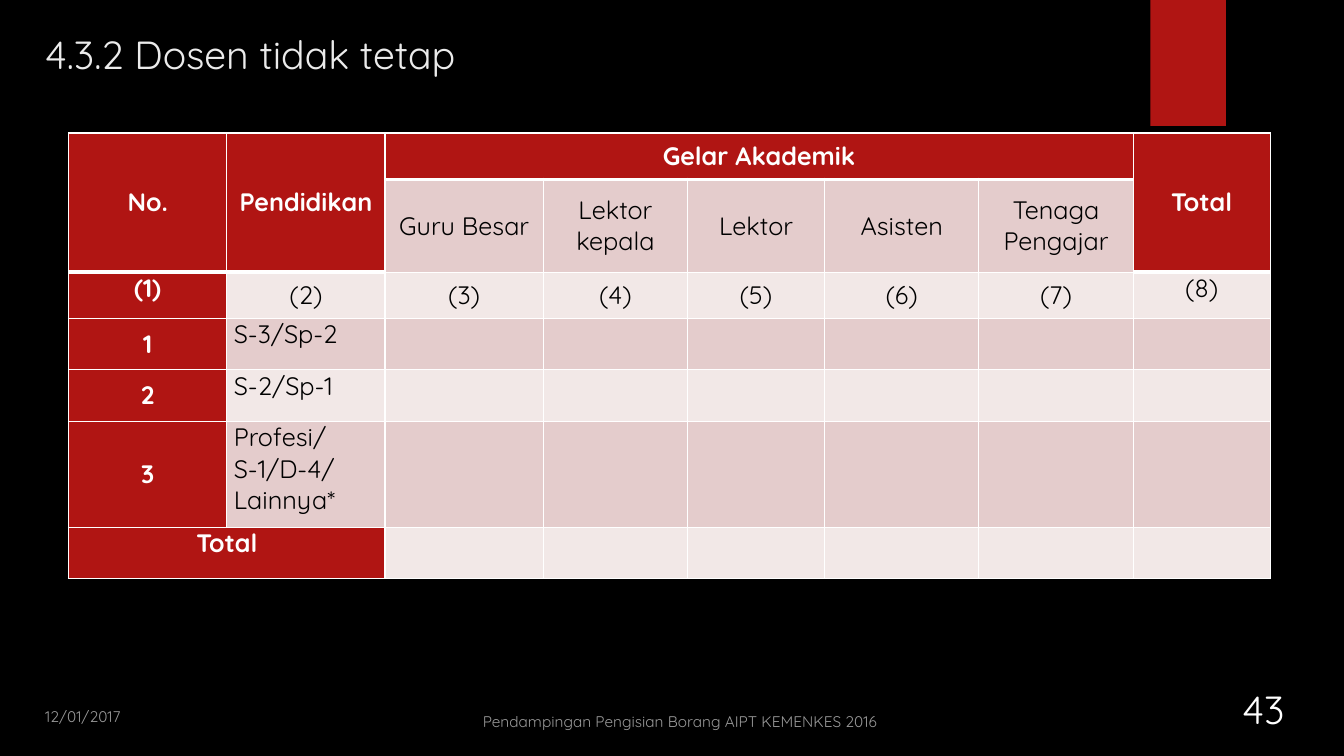
import dataclasses

import pptx
import pptx.dml.color
import pptx.enum.shapes
import pptx.enum.text
import pptx.oxml
import pptx.oxml.ns
import pptx.util

Inches = pptx.util.Inches
Pt = pptx.util.Pt
ALIGN = pptx.enum.text.PP_ALIGN
ANCHOR = pptx.enum.text.MSO_ANCHOR


@dataclasses.dataclass(frozen=True)
class Theme:
    font: str = "Quicksand"
    black: str = "000000"
    white: str = "FFFFFF"
    pale: str = "EBEBEB"
    red: str = "B01513"
    dark: str = "E4CCCC"
    light: str = "F2E8E7"
    head: int = 28
    body: int = 18
    small: int = 11


THEME = Theme()
COLS = [1.57, 1.57, 1.57, 1.43, 1.36, 1.53, 1.53, 1.36]
ROWS = [0.46, 0.92, 0.46, 0.51, 0.51, 1.05, 0.51]
CELLS = [
    ["No.", "Pendidikan", "Gelar Akademik", "", "", "", "", "Total"],
    ["", "", "Guru Besar", "Lektor kepala", "Lektor", "Asisten", "Tenaga Pengajar", ""],
    [f"({n})" for n in range(1, 9)],
    ["1", "S-3/Sp-2"],
    ["2", "S-2/Sp-1"],
    ["3", "Profesi/\nS-1/D-4/Lainnya*"],
    ["Total"],
]
MERGES = [(0, 0, 1, 0), (0, 1, 1, 1), (0, 2, 0, 6), (0, 7, 1, 7), (6, 0, 6, 1)]
TALL = (0, 1, 7)
TOP = {(2, 0), (2, 7), (3, 1), (4, 1), (5, 1), (6, 0)}


def color(code):
    return pptx.dml.color.RGBColor.from_string(code)


def style(frame, size, code, align=ALIGN.LEFT, bold=False):
    for para in frame.paragraphs:
        para.alignment = align
        for run in para.runs:
            run.font.name = THEME.font
            run.font.size = Pt(size)
            run.font.bold = bold
            run.font.color.rgb = color(code)


def fade(frame, share):
    for node in frame._txBody.iter(pptx.oxml.ns.qn("a:srgbClr")):
        alpha = node.makeelement(pptx.oxml.ns.qn("a:alpha"), {"val": str(share * 1000)})
        node.append(alpha)


def label(slide, text, place, size, code, align=ALIGN.LEFT, anchor=ANCHOR.TOP):
    frame = slide.shapes.add_textbox(*map(Inches, place)).text_frame
    frame.word_wrap = True
    frame.vertical_anchor = anchor
    frame.text = text
    style(frame, size, code, align)
    return frame


def ribbon(slide):
    shape = slide.shapes.add_shape(
        pptx.enum.shapes.MSO_SHAPE.RECTANGLE,
        Inches(11.41), Inches(0), Inches(0.75), Inches(1.25))
    shape.shadow.inherit = False
    shape.fill.solid()
    shape.fill.fore_color.rgb = color(THEME.red)
    shape.line.fill.background()


def edge(cell, side, width):
    line = pptx.oxml.parse_xml(
        f'<a:ln{side} {pptx.oxml.ns.nsdecls("a")} w="{Pt(width)}"><a:solidFill>'
        f'<a:srgbClr val="{THEME.white}"/></a:solidFill></a:ln{side}>')
    cell._tc.get_or_add_tcPr().append(line)


def below(row, col):
    return 3 if row == 0 or row == 1 and col in TALL else 1


def paint(cell, row, col, text):
    head = col == 0 or row == 0 or row == 1 and col in TALL or row == 6 and col == 1
    for side, width in [("L", 1), ("R", 1), ("T", below(row - 1, col)), ("B", below(row, col))]:
        edge(cell, side, width)
    cell.fill.solid()
    band = THEME.dark if row % 2 else THEME.light
    cell.fill.fore_color.rgb = color(THEME.red if head else band)
    cell.margin_left = cell.margin_right = Inches(0.07)
    cell.margin_top = cell.margin_bottom = 0
    cell.vertical_anchor = ANCHOR.TOP if (row, col) in TOP else ANCHOR.MIDDLE
    if text:
        cell.text_frame.text = text
        align = ALIGN.LEFT if col == 1 and row > 2 else ALIGN.CENTER
        style(cell.text_frame, THEME.body, THEME.white if head else THEME.black, align, head)


def grid(slide):
    table = slide.shapes.add_table(
        len(ROWS), len(COLS), Inches(0.68), Inches(1.32),
        Inches(sum(COLS)), Inches(sum(ROWS))).table
    for col, width in zip(table.columns, COLS):
        col.width = Inches(width)
    for row, high in zip(table.rows, ROWS):
        row.height = Inches(high)
    for r, texts in enumerate(CELLS):
        for c in range(len(COLS)):
            paint(table.cell(r, c), r, c, texts[c] if c < len(texts) else "")
    for r, c, last, end in MERGES:
        table.cell(r, c).merge(table.cell(last, end))


def main():
    deck = pptx.Presentation()
    deck.slide_width = Inches(13.33)
    deck.slide_height = Inches(7.5)
    slide = deck.slides.add_slide(deck.slide_layouts[6])
    slide.background.fill.solid()
    slide.background.fill.fore_color.rgb = color(THEME.black)
    ribbon(slide)
    label(slide, "4.3.2 Dosen tidak tetap", (0.35, 0.25, 10.64, 0.74), THEME.head, THEME.pale)
    grid(slide)
    label(slide, "43", (12.07, 6.47, 0.92, 0.84), THEME.head, THEME.white,
          ALIGN.CENTER, ANCHOR.BOTTOM)
    foot = label(slide, "Pendampingan Pengisian Borang AIPT KEMENKES 2016",
                 (4.69, 6.97, 4.22, 0.33), THEME.small, THEME.white, anchor=ANCHOR.BOTTOM)
    date = label(slide, "12/01/2017", (0.35, 6.97, 1.08, 0.33), THEME.small, THEME.white)
    for frame in (foot, date):
        fade(frame, 60)
    deck.save("out.pptx")


if __name__ == "__main__":
    main()
